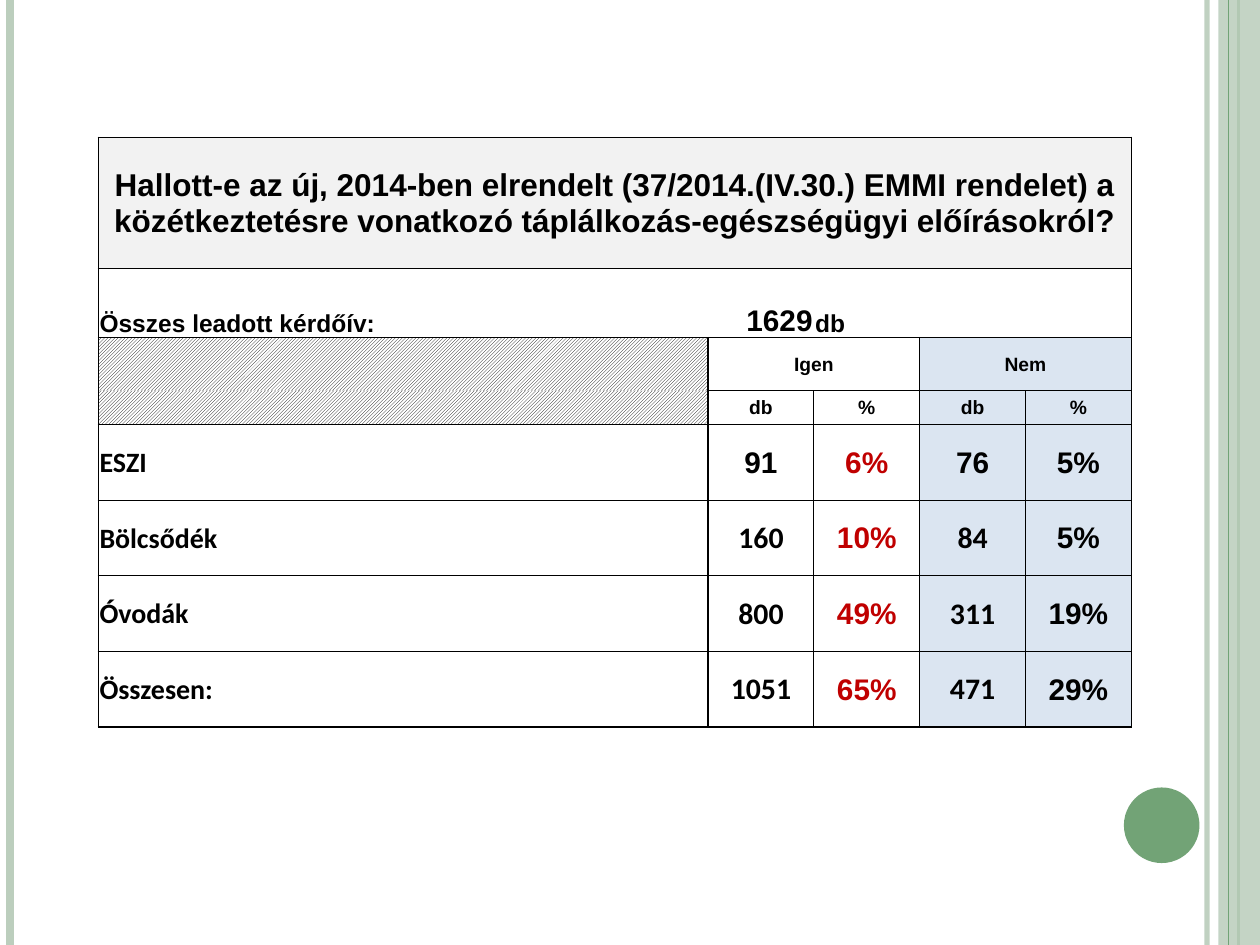
import pptx
import pptx.util
import pptx.dml.color
import pptx.enum.dml
import pptx.enum.shapes
import pptx.enum.text
import pptx.oxml
import pptx.oxml.ns
import lxml.etree

Inches = pptx.util.Inches
Pt = pptx.util.Pt
qn = pptx.oxml.ns.qn
ALIGN = pptx.enum.text.PP_ALIGN
ANCHOR = pptx.enum.text.MSO_ANCHOR


class Theme:
    black = "000000"
    white = "FFFFFF"
    green = "72A376"
    pale_green = "BCCEBD"
    heading = "F2F2F2"
    blue = "DBE5F1"
    red = "C00000"
    sans = "Arial"
    body = "Calibri"
    title_size = 18
    number_size = 17
    label_size = 16
    total_size = 14
    column_size = 11


def rgb(color):
    return pptx.dml.color.RGBColor.from_string(color)


def set_alpha(parent, percent):
    color = next(parent.iter(qn("a:srgbClr")))
    lxml.etree.SubElement(color, qn("a:alpha")).set("val", str(percent * 1000))


class SlideBuilder:
    def __init__(self, presentation, theme):
        self.theme = theme
        self.slide = presentation.slides.add_slide(presentation.slide_layouts[6])

    def vertical_line(self, x, color, width, alpha=None):
        line = self.slide.shapes.add_connector(
            pptx.enum.shapes.MSO_CONNECTOR.STRAIGHT,
            Inches(x), Inches(0), Inches(x), Inches(7.5))
        line.line.color.rgb = rgb(color)
        line.line.width = Pt(width)
        properties = line._element.spPr
        if alpha:
            set_alpha(properties, alpha)
        lxml.etree.SubElement(properties, qn("a:effectLst"))

    def shape(self, kind, left, top, width, height, color, alpha=None):
        shape = self.slide.shapes.add_shape(
            kind, Inches(left), Inches(top), Inches(width), Inches(height))
        shape.shadow.inherit = False
        shape.fill.solid()
        shape.fill.fore_color.rgb = rgb(color)
        shape.line.fill.background()
        if alpha:
            set_alpha(shape._element.spPr, alpha)

    def table(self, left, top, columns, rows):
        frame = self.slide.shapes.add_table(
            len(rows), len(columns), Inches(left), Inches(top),
            Inches(sum(columns)), Inches(sum(rows)))
        table = frame.table
        table.first_row = False
        table.horz_banding = False
        for column, width in zip(table.columns, columns):
            column.width = Inches(width)
        for row, height in zip(table.rows, rows):
            row.height = Inches(height)
        return table

    def cell(self, cell, text, size, font=None, color=None, fill=None,
             align=ALIGN.CENTER, anchor=ANCHOR.MIDDLE):
        margins = {"margin_left": 0.01, "margin_right": 0.01,
                   "margin_top": 0.01, "margin_bottom": 0}
        for name, value in margins.items():
            setattr(cell, name, Inches(value))
        cell.vertical_anchor = anchor
        paragraph = cell.text_frame.paragraphs[0]
        paragraph.alignment = align
        if text:
            run = paragraph.add_run()
            run.text = text
            formats = {"size": Pt(size), "bold": True, "name": font or self.theme.sans}
            for name, value in formats.items():
                setattr(run.font, name, value)
            run.font.color.rgb = rgb(color or self.theme.black)
        else:
            ending = lxml.etree.SubElement(paragraph._p, qn("a:endParaRPr"))
            ending.set("sz", str(size * 100))
        if fill == "hatch":
            cell.fill.patterned()
            cell.fill.pattern = pptx.enum.dml.MSO_PATTERN.LIGHT_UPWARD_DIAGONAL
            cell.fill.fore_color.rgb = rgb(self.theme.black)
            cell.fill.back_color.rgb = rgb(self.theme.white)
        elif fill:
            cell.fill.solid()
            cell.fill.fore_color.rgb = rgb(fill)
        else:
            cell.fill.background()

    def borders(self, cell, widths):
        properties = cell._tc.get_or_add_tcPr()
        for index, (side, width) in enumerate(zip("LRTB", widths)):
            line = lxml.etree.Element(qn("a:ln" + side))
            line.set("w", str(Pt(width)))
            if width:
                fill = lxml.etree.SubElement(line, qn("a:solidFill"))
                lxml.etree.SubElement(fill, qn("a:srgbClr")).set("val", self.theme.black)
            else:
                lxml.etree.SubElement(line, qn("a:noFill"))
            properties.insert(index, line)


def border_widths(row, column):
    left, right = [1, 1, 0.5, 1, 0.5][column], [1, 0.5, 1, 0.5, 1][column]
    top = [1, 1, 1, 0.5, 0.5, 0.5, 0.5, 1][row]
    bottom = [1, 1, 0.5, 0.5, 0.5, 0.5, 1, 1][row]
    if row == 0:
        left = right = 1
    elif row == 1:
        left, right = int(column == 0), int(column == 4)
    elif row == 2:
        right = 1
        bottom = 0 if column == 0 else bottom
    elif row == 3 and column == 0:
        top = 0
    elif row == 7 and column in (2, 3):
        left = right = 0.5
    return left, right, top, bottom


def fill_survey(builder, table, theme):
    table.cell(0, 0).merge(table.cell(0, 4))
    for column in (1, 3):
        table.cell(2, column).merge(table.cell(2, column + 1))

    builder.cell(
        table.cell(0, 0),
        "Hallott-e az új, 2014-ben elrendelt (37/2014.(IV.30.) EMMI rendelet) a "
        "közétkeztetésre vonatkozó táplálkozás-egészségügyi előírásokról?",
        theme.title_size, fill=theme.heading)

    totals = [("Összes leadott kérdőív:", theme.total_size, ALIGN.LEFT),
              ("1629", theme.number_size, ALIGN.RIGHT),
              ("db", theme.total_size, ALIGN.LEFT),
              ("", theme.total_size, ALIGN.LEFT),
              ("", theme.total_size, ALIGN.LEFT)]
    for column, (text, size, align) in enumerate(totals):
        builder.cell(table.cell(1, column), text, size, align=align, anchor=ANCHOR.BOTTOM)

    column_fills = ["hatch", theme.white, theme.white, theme.blue, theme.blue]
    headings = [["", "Igen", "", "Nem", ""], ["", "db", "%", "db", "%"]]
    for row, texts in enumerate(headings, 2):
        for column, text in enumerate(texts):
            builder.cell(table.cell(row, column), text, theme.column_size,
                         fill=column_fills[column])

    answers = [["ESZI", "91", "6%", "76", "5%"],
               ["Bölcsődék", "160", "10%", "84", "5%"],
               ["Óvodák", "800", "49%", "311", "19%"],
               ["Összesen:", "1051", "65%", "471", "29%"]]
    for row, (label, *values) in enumerate(answers, 4):
        builder.cell(table.cell(row, 0), label, theme.label_size, theme.body, align=ALIGN.LEFT)
        for column, value in enumerate(values, 1):
            arial = row == 4 or value.endswith("%")
            builder.cell(table.cell(row, column), value, theme.number_size,
                         theme.sans if arial else theme.body,
                         color=theme.red if column == 2 else theme.black,
                         fill=theme.blue if column > 2 else None)

    for row in range(len(table.rows)):
        for column in range(len(table.columns)):
            builder.borders(table.cell(row, column), border_widths(row, column))


def main():
    presentation = pptx.Presentation()
    presentation.slide_width = Inches(10)
    presentation.slide_height = Inches(7.5)
    theme = Theme()
    builder = SlideBuilder(presentation, theme)
    shapes = pptx.enum.shapes.MSO_SHAPE

    builder.vertical_line(9.58, theme.pale_green, 3, alpha=93)
    builder.vertical_line(0.08, theme.pale_green, 4.5)
    builder.vertical_line(9.83, theme.green, 1.5)
    builder.shape(shapes.RECTANGLE, 9.67, 0, 0.33, 7.5, theme.pale_green, alpha=87)
    builder.vertical_line(9.75, theme.green, 0.75)
    builder.shape(shapes.OVAL, 8.92, 6.25, 0.6, 0.6, theme.green)

    table = builder.table(0.78, 1.09, [4.84] + [0.84] * 4, [1.04, 0.55, 0.42, 0.27] + [0.6] * 4)
    fill_survey(builder, table, theme)
    presentation.save("out.pptx")


if __name__ == "__main__":
    main()
